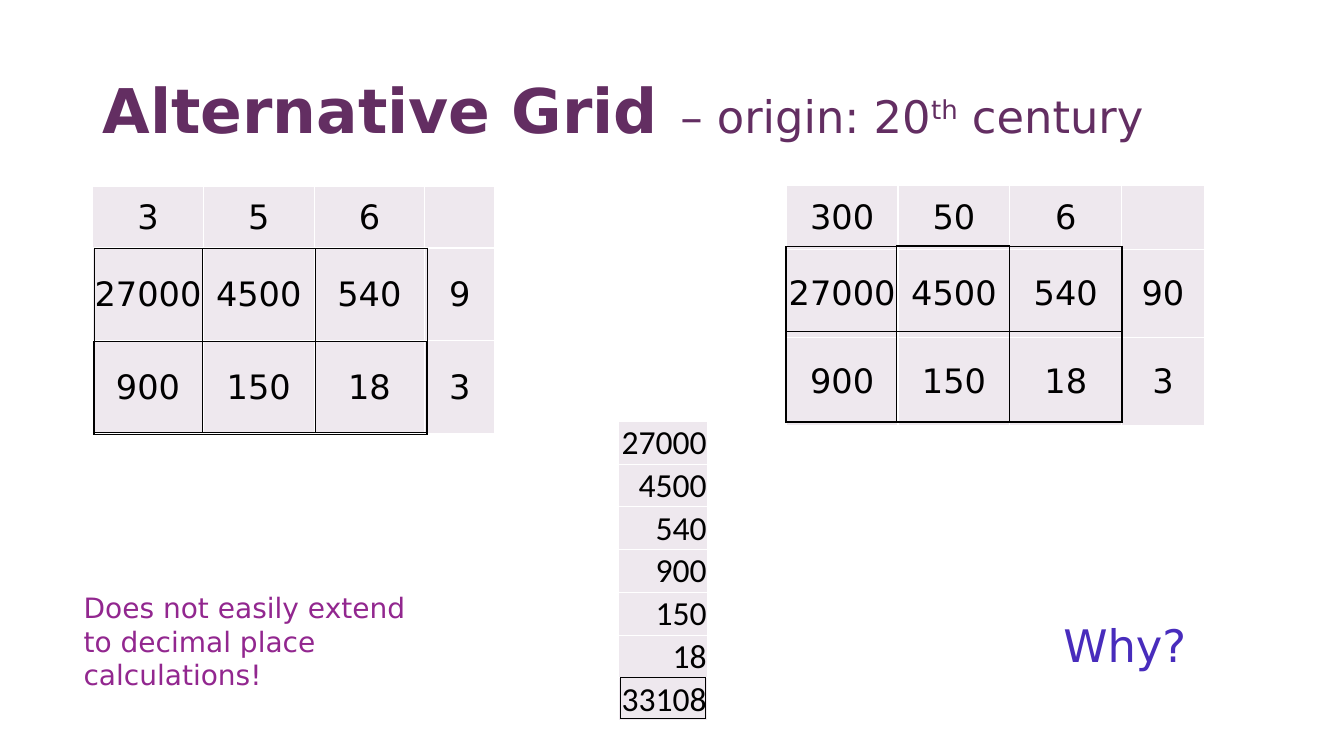
import pptx
import pptx.dml.color
import pptx.enum.text
import pptx.oxml
import pptx.oxml.ns
import pptx.util

Pt = pptx.util.Pt
ALIGN = pptx.enum.text.PP_ALIGN
ANCHOR = pptx.enum.text.MSO_ANCHOR

COLOURS = {
    "title": "632E62", "cell": "EEE8EE", "grid": "FFFFFF", "frame": "000000",
    "text": "000000", "remark": "92278F", "question": "482CBC",
}
SANS, BODY = "DejaVu Sans", "Calibri"

# Content: text, size, bold, superscript
TITLE_RUNS = [
    ("Alternative Grid ", 44, True, False),
    ("– origin: 20", 32, False, False),
    ("th", 32, False, True),
    (" century", 32, False, False),
]
PRODUCTS = [["27000", "4500", "540"], ["900", "150", "18"]]
TOTAL = "33108"

# Grids: left, top, column widths, row heights, column heads, row heads
GRIDS = [
    (66.2, 133.2, [79.1] * 3 + [50], [44, 66.2, 66.2], ["3", "5", "6"], ["9", "3"]),
    (561.6, 132.5, [79.9] * 3 + [59], [46, 62.7, 62.7], ["300", "50", "6"], ["90", "3"]),
]
SUM_COLUMN = (441.5, 301, 64, 30.55)  # left, top, width, row height

# Outlines: left, top, width, height
FRAMES = [
    (67.5, 177.3, 237.6, 131.8), (561.5, 176.2, 240, 125.2),
    (144.7, 177.6, 80.8, 131.2), (640.6, 175.6, 80.2, 125.2),
    (67.2, 244.2, 237.8, 66), (561.5, 236.9, 240.3, 64.6),
    (443.3, 484, 60.8, 28.8),
]

# Notes: text, box, size, colour
NOTES = [
    ("Does not easily extend to decimal place calculations!",
     (52.6, 418.3, 265.7, 79.9), 20, "remark"),
    ("Why?", (752.4, 437.8, 114.5, 46), 32, "question"),
]


def style_font(font, name, size, colour):
    font.name, font.size = name, Pt(size)
    font.color.rgb = pptx.dml.color.RGBColor.from_string(COLOURS[colour])


def add_borders(cell, colour):
    properties = cell._tc.get_or_add_tcPr()
    for side in ("lnL", "lnR", "lnT", "lnB"):
        properties.append(pptx.oxml.parse_xml(
            f'<a:{side} {pptx.oxml.ns.nsdecls("a")} w="12700"><a:solidFill>'
            f'<a:srgbClr val="{COLOURS[colour]}"/></a:solidFill></a:{side}>'))


def add_grid(slide, left, top, widths, heights, rows, border, font_name=SANS,
             alignment=ALIGN.CENTER, filled=True):
    table = slide.shapes.add_table(
        len(heights), len(widths), Pt(left), Pt(top),
        Pt(sum(widths)), Pt(sum(heights))).table
    table.first_row = table.horz_banding = False
    for column, width in zip(table.columns, widths):
        column.width = Pt(width)
    for row, height, texts in zip(table.rows, heights, rows):
        row.height = Pt(height)
        for cell, text in zip(row.cells, texts):
            add_borders(cell, border)
            if filled:
                cell.fill.solid()
                cell.fill.fore_color.rgb = pptx.dml.color.RGBColor.from_string(COLOURS["cell"])
            else:
                cell.fill.background()
            if text:
                cell.margin_left = cell.margin_right = cell.margin_top = Pt(0.7)
                cell.margin_bottom = Pt(0)
                cell.vertical_anchor = ANCHOR.MIDDLE
                cell.text_frame.text = text
                paragraph = cell.text_frame.paragraphs[0]
                paragraph.alignment = alignment
                style_font(paragraph.runs[0].font, font_name, 24, "text")
    return table


presentation = pptx.Presentation()
presentation.slide_width, presentation.slide_height = Pt(960), Pt(540)
slide = presentation.slides.add_slide(presentation.slide_layouts[5])

# Title
title = slide.shapes.title
title.left, title.top, title.width, title.height = Pt(66), Pt(28.8), Pt(828), Pt(104.4)
title.text_frame.vertical_anchor = ANCHOR.MIDDLE
title.text_frame.word_wrap = True
paragraph = title.text_frame.paragraphs[0]
paragraph.alignment = ALIGN.LEFT
paragraph.line_spacing = 0.9
for text, size, bold, superscript in TITLE_RUNS:
    run = paragraph.add_run()
    run.text = text
    style_font(run.font, SANS, size, "title")
    run.font.bold = bold
    if superscript:
        run.font._element.set("baseline", "30000")

# Multiplication grids
for left, top, widths, heights, column_heads, row_heads in GRIDS:
    rows = [column_heads + [""]]
    rows += [products + [head] for products, head in zip(PRODUCTS, row_heads)]
    add_grid(slide, left, top, widths, heights, rows, "grid")

# Column of products and their total
left, top, width, height = SUM_COLUMN
addends = [[product] for products in PRODUCTS for product in products] + [[TOTAL]]
sums = add_grid(slide, left, top, [width], [height] * len(addends), addends,
                "grid", BODY, ALIGN.RIGHT)
sums.cell(len(addends) - 1, 0).vertical_anchor = ANCHOR.BOTTOM

# Black outlines over the grids
for left, top, width, height in FRAMES:
    add_grid(slide, left, top, [width], [height], [[""]], "frame", filled=False)

# Notes
for text, box, size, colour in NOTES:
    text_frame = slide.shapes.add_textbox(*map(Pt, box)).text_frame
    text_frame.word_wrap = True
    text_frame.auto_size = pptx.enum.text.MSO_AUTO_SIZE.SHAPE_TO_FIT_TEXT
    text_frame.text = text
    style_font(text_frame.paragraphs[0].runs[0].font, SANS, size, colour)

presentation.save("out.pptx")
